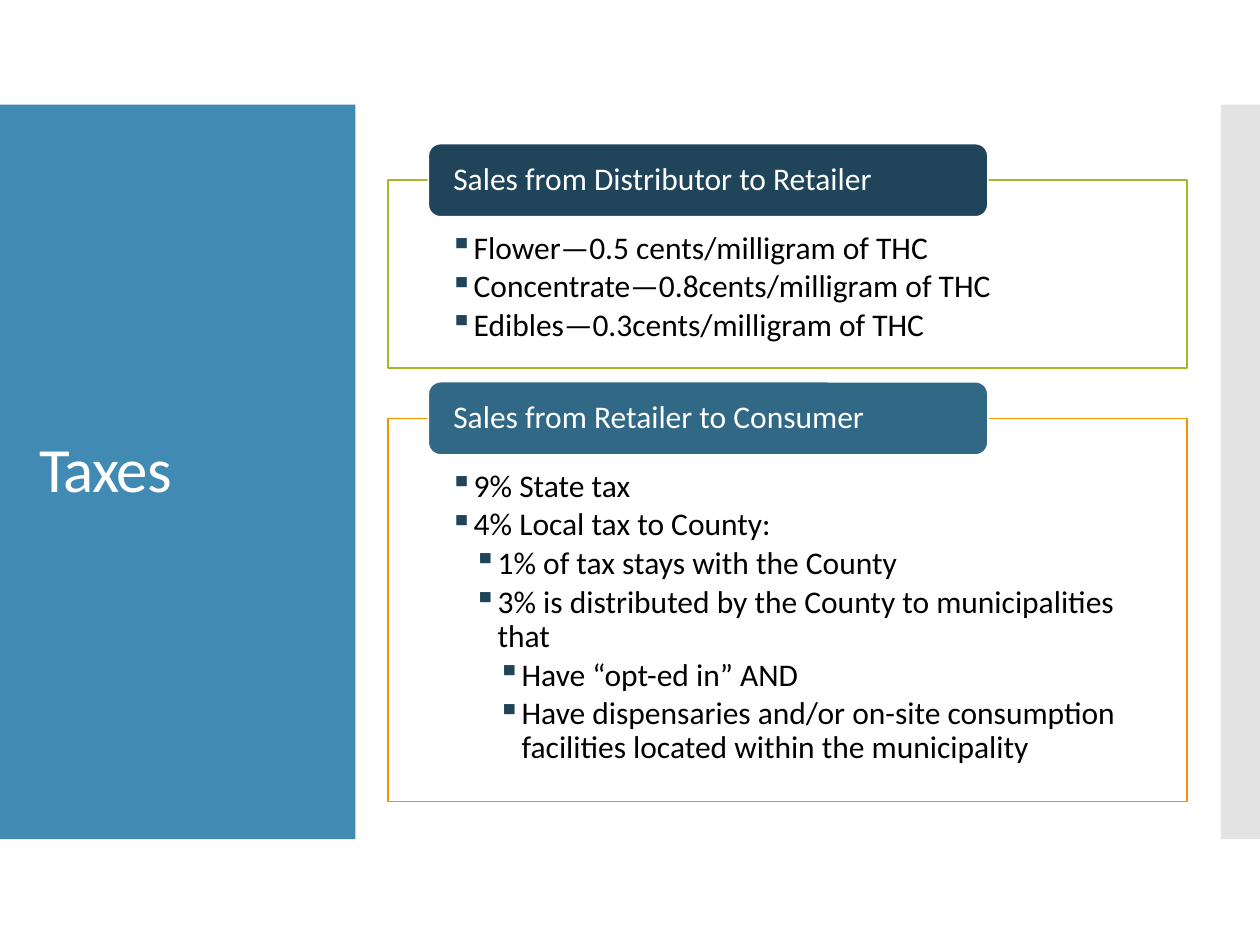
from lxml.etree import SubElement
from pptx import Presentation
from pptx.dml.color import RGBColor
from pptx.enum.shapes import MSO_SHAPE as Shape
from pptx.enum.text import MSO_ANCHOR as Anchor, MSO_AUTO_SIZE as AutoSize, PP_ALIGN as Align
from pptx.oxml.ns import qn
from pptx.util import Inches, Pt

WHITE = RGBColor(0xFF, 0xFF, 0xFF)
BLACK = RGBColor(0, 0, 0)
BLUE = RGBColor(0x41, 0x8A, 0xB3)
GREY = RGBColor(0xC8, 0xC8, 0xC8)
NAVY = RGBColor(0x20, 0x45, 0x5A)
STEEL = RGBColor(0x31, 0x68, 0x86)
GREEN = RGBColor(0xA6, 0xB7, 0x27)
ORANGE = RGBColor(0xF6, 0x92, 0x00)
FONT = "Calibri"

# Content: heading, heading fill, box outline, box top and height, (level, text) items
TITLE = "Taxes"
SECTIONS = [
    ("Sales from Distributor to Retailer", NAVY, GREEN, 1.43, 1.49, [
        (1, "Flower—0.5 cents/milligram of THC"),
        (1, "Concentrate—0.8cents/milligram of THC"),
        (1, "Edibles—0.3cents/milligram of THC"),
    ]),
    ("Sales from Retailer to Consumer", STEEL, ORANGE, 3.32, 3.04, [
        (1, "9% State tax"),
        (1, "4% Local tax to County:"),
        (2, "1% of tax stays with the County"),
        (2, "3% is distributed by the County to municipalities that"),
        (3, "Have “opt-ed in” AND"),
        (3, "Have dispensaries and/or on-site consumption facilities located within the municipality"),
    ]),
]

# Layout in inches
PANEL_TOP, PANEL_HEIGHT = 0.83, 5.83
BOX_LEFT, BOX_WIDTH = 3.08, 6.34
TAB_LEFT, TAB_WIDTH, TAB_HEIGHT = 3.4, 4.44, 0.58
INDENT = 0.19


def add_block(slide, kind, left, top, width, height, fill, line=None, opacity=None):
    shape = slide.shapes.add_shape(
        kind, Inches(left), Inches(top), Inches(width), Inches(height))
    shape.shadow.inherit = False
    shape.fill.solid()
    shape.fill.fore_color.rgb = fill
    if opacity:
        color = shape.element.spPr.find(f"{qn('a:solidFill')}/{qn('a:srgbClr')}")
        SubElement(color, qn("a:alpha"), val=str(opacity * 1000))
    if line is None:
        shape.line.fill.background()
    else:
        shape.line.color.rgb = line
        shape.line.width = Pt(0.85)
    return shape


def set_frame(frame, anchor, side, top=0, bottom=0):
    frame.word_wrap = True
    frame.auto_size = AutoSize.NONE
    frame.vertical_anchor = anchor
    frame.margin_left = frame.margin_right = Inches(side)
    frame.margin_top, frame.margin_bottom = Inches(top), Inches(bottom)


def write(paragraph, text, size, color):
    paragraph.alignment = Align.LEFT
    paragraph.line_spacing = 0.9
    run = paragraph.add_run()
    run.text = text
    run.font.name = FONT
    run.font.size = Pt(size)
    run.font.color.rgb = color
    return run


def add_bullet(paragraph, level):
    paragraph.level = level
    paragraph.space_after = Pt(2.7)
    properties = paragraph._p.get_or_add_pPr()
    properties.set("marL", str(Inches(INDENT * level)))
    properties.set("indent", str(-Inches(INDENT)))
    bullet_color = SubElement(properties, qn("a:buClr"))
    SubElement(bullet_color, qn("a:srgbClr"), val=str(NAVY))
    SubElement(properties, qn("a:buChar"), char="▪")


presentation = Presentation()
presentation.slide_width, presentation.slide_height = Inches(10), Inches(7.5)
slide = presentation.slides.add_slide(presentation.slide_layouts[5])
title = slide.shapes.title

# Side panels, kept behind the title
for left, width, fill, opacity in [(0, 2.82, BLUE, None), (9.69, 0.31, GREY, 50)]:
    panel = add_block(slide, Shape.RECTANGLE, left, PANEL_TOP, width, PANEL_HEIGHT,
                      fill, opacity=opacity)
    title.element.addprevious(panel.element)

# Title
title.left, title.top = Inches(0.21), Inches(1.23)
title.width, title.height = Inches(2.42), Inches(5.03)
set_frame(title.text_frame, Anchor.MIDDLE, 0.1, 0.05, 0.05)
title_run = write(title.text_frame.paragraphs[0], TITLE, 36, WHITE)
title_run.font._element.set("spc", "-60")

# Outlined boxes, each with a heading tab centred on its top edge
for heading, tab_fill, outline, top, height, items in SECTIONS:
    box = add_block(slide, Shape.RECTANGLE, BOX_LEFT, top, BOX_WIDTH, height,
                    WHITE, outline, opacity=90)
    frame = box.text_frame
    set_frame(frame, Anchor.TOP, 0.49, 0.41, 0.14)
    for index, (level, text) in enumerate(items):
        paragraph = frame.add_paragraph() if index else frame.paragraphs[0]
        write(paragraph, text, 18, BLACK)
        add_bullet(paragraph, level)

    tab = add_block(slide, Shape.ROUNDED_RECTANGLE, TAB_LEFT, top - TAB_HEIGHT / 2,
                    TAB_WIDTH, TAB_HEIGHT, tab_fill, WHITE)
    set_frame(tab.text_frame, Anchor.MIDDLE, 0.17)
    write(tab.text_frame.paragraphs[0], heading, 18, WHITE)

presentation.save("out.pptx")
